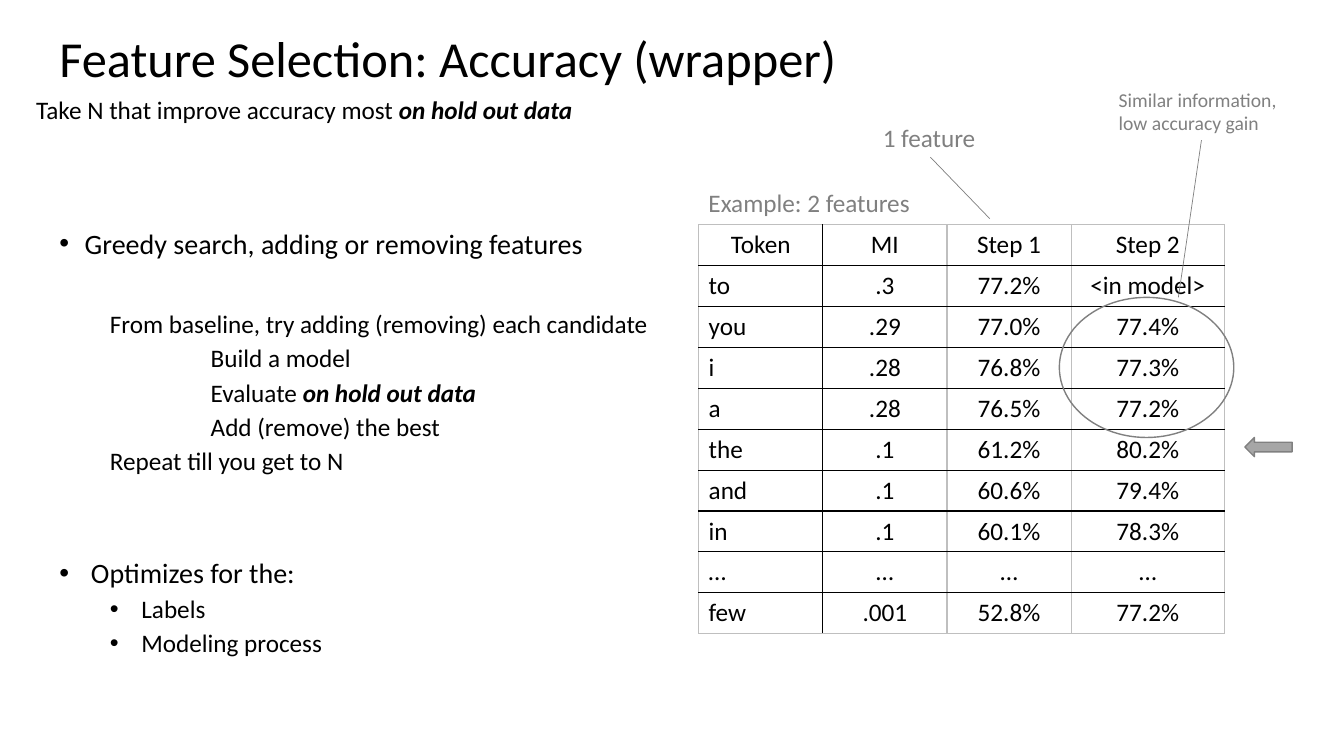
"""Build the slide on accuracy-based (wrapper) feature selection."""
from lxml.etree import SubElement
from pptx import Presentation
from pptx.dml.color import RGBColor
from pptx.enum.shapes import MSO_CONNECTOR, MSO_SHAPE
from pptx.enum.text import MSO_ANCHOR, MSO_AUTO_SIZE, PP_ALIGN
from pptx.oxml.ns import qn
from pptx.util import Pt

FONT = "Calibri"
BLACK, GREY, ARROW_FILL, TABLE_EDGE = "000000", "808080", "A6A6A6", "BFBFBF"
TITLE = "Feature Selection: Accuracy (wrapper)"
HOLD_OUT = ("on hold out data", True)

# Body lines: runs, size, level, left margin, first-line indent, space before
BODY = [
    ([("Greedy search, adding or removing features", False)], 20, 0, 18, -18, 10),
    ([("From baseline, try adding (removing) each candidate", False)], 18, 1, 36, 0, 37),
    ([("Build a model", False)], 18, 1, 108, 0, 5),
    ([("Evaluate ", False), HOLD_OUT], 18, 1, 108, 0, 5),
    ([("Add (remove) the best", False)], 18, 1, 108, 0, 5),
    ([("Repeat till you get to N", False)], 18, 1, 36, 0, 5),
    ([("Optimizes for the:", False)], 20, 0, 22.5, -22.5, 59.5),
    ([("Labels", False)], 18, 1, 58.5, -22.5, 5),
    ([("Modeling process", False)], 18, 1, 58.5, -22.5, 5),
]

# Text boxes: runs, left, top, width, height, size, colour, wrap
LABELS = [
    ([("Take N that improve accuracy most ", False), HOLD_OUT],
     18.7, 64.1, 480, 29, 18, BLACK, True),
    ([("1 feature", False)], 623.5, 83.5, 81.4, 29, 18, GREY, False),
    ([("Similar information, low accuracy gain", False)],
     792, 59, 132.5, 41, 14, GREY, True),
    ([("Example: 2 features", False)], 499, 130.3, 160, 29, 18, GREY, False),
]

TOKEN_COLUMNS = [
    ["Token", "to", "you", "i", "a", "the", "and", "in", "…", "few"],
    ["MI", ".3", ".29", ".28", ".28", ".1", ".1", ".1", "…", ".001"],
]
STEP_1 = ["Step 1", "77.2%", "77.0%", "76.8%", "76.5%",
          "61.2%", "60.6%", "60.1%", "…", "52.8%"]
STEP_2 = ["Step 2", "<in model>", "77.4%", "77.3%", "77.2%",
          "80.2%", "79.4%", "78.3%", "…", "77.2%"]
TABLES = [(TOKEN_COLUMNS, 88.7), ([STEP_1], 88.7), ([STEP_2], 109.5)]
TABLE_LEFT, TABLE_TOP, ROW_HEIGHT = 499, 160.6, 29.2

CALLOUTS = [(707, 156.2, 664.6, 112.3), (841.7, 212.4, 858.2, 100.1)]
ELLIPSE = (756.7, 212.4, 124.6, 100.1)
ARROW = (889.2, 312.5, 33.8, 13.7)


def rgb(value):
    return RGBColor.from_string(value)


def add_runs(para, runs, size, color=BLACK):
    for text, emphasis in runs:
        span = para.add_run()
        span.text = text
        span.font.name = FONT
        span.font.size = Pt(size)
        span.font.bold = span.font.italic = emphasis
        span.font.color.rgb = rgb(color)


def place(shape, left, top, width, height):
    shape.left, shape.top = Pt(left), Pt(top)
    shape.width, shape.height = Pt(width), Pt(height)


def add_title(slide):
    title = slide.shapes.title
    place(title, 35.3, 15.8, 570.2, 56.2)
    frame = title.text_frame
    frame.auto_size = MSO_AUTO_SIZE.NONE
    frame.vertical_anchor = MSO_ANCHOR.MIDDLE
    para = frame.paragraphs[0]
    para.alignment = PP_ALIGN.LEFT
    para.line_spacing = 0.9
    add_runs(para, [(TITLE, False)], 36)


def add_body(slide):
    body = slide.placeholders[1]
    place(body, 35.3, 160.6, 436.3, 315.4)
    frame = body.text_frame
    frame.auto_size = MSO_AUTO_SIZE.NONE
    for index, (runs, size, level, margin, indent, before) in enumerate(BODY):
        para = frame.add_paragraph() if index else frame.paragraphs[0]
        para.level = level
        para.line_spacing = 0.9
        para.space_before = Pt(before)
        properties = para._p.get_or_add_pPr()
        properties.set("marL", str(Pt(margin)))
        properties.set("indent", str(Pt(indent)))
        if indent:
            SubElement(properties, qn("a:buFont"), typeface="Arial")
            SubElement(properties, qn("a:buChar"), char="•")
        else:
            SubElement(properties, qn("a:buNone"))
        add_runs(para, runs, size)


def set_borders(cell, edges):
    properties = cell._tc.get_or_add_tcPr()
    for index, (tag, outer) in enumerate(edges):
        border = SubElement(properties, qn(f"a:{tag}"), w=str(Pt(1)))
        fill = SubElement(border, qn("a:solidFill"))
        SubElement(fill, qn("a:srgbClr"), val=TABLE_EDGE if outer else BLACK)
        properties.insert(index, border)


def add_table(slide, columns, left, width):
    count = len(columns[0])
    frame = slide.shapes.add_table(
        count, len(columns), Pt(left), Pt(TABLE_TOP),
        Pt(width * len(columns)), Pt(ROW_HEIGHT * count))
    table = frame.table
    table.first_row = table.horz_banding = False
    for row in table.rows:
        row.height = Pt(ROW_HEIGHT)
    for x, values in enumerate(columns):
        table.columns[x].width = Pt(width)
        for y, value in enumerate(values):
            cell = table.cell(y, x)
            cell.fill.background()
            cell.vertical_anchor = MSO_ANCHOR.TOP if y else MSO_ANCHOR.MIDDLE
            para = cell.text_frame.paragraphs[0]
            is_token = columns is TOKEN_COLUMNS and x == 0 and y > 0
            para.alignment = PP_ALIGN.LEFT if is_token else PP_ALIGN.CENTER
            add_runs(para, [(value, False)], 18)
            set_borders(cell, [("lnL", x == 0), ("lnR", x == len(columns) - 1),
                               ("lnT", y == 0), ("lnB", y == count - 1)])


def add_label(slide, runs, left, top, width, height, size, color, wrap):
    box = slide.shapes.add_textbox(Pt(left), Pt(top), Pt(width), Pt(height))
    box.text_frame.word_wrap = wrap
    add_runs(box.text_frame.paragraphs[0], runs, size, color)


def add_callout(slide, *ends):
    line = slide.shapes.add_connector(MSO_CONNECTOR.STRAIGHT, *map(Pt, ends))
    line.line.color.rgb = rgb(GREY)
    line.line.width = Pt(0.5)
    SubElement(line._element.spPr, qn("a:effectLst"))


def add_marker(slide, kind, area, fill=None):
    marker = slide.shapes.add_shape(kind, *map(Pt, area))
    marker.shadow.inherit = False
    marker.line.color.rgb = rgb(GREY)
    marker.line.width = Pt(1)
    if fill:
        marker.fill.solid()
        marker.fill.fore_color.rgb = rgb(fill)
    else:
        marker.fill.background()


def main():
    deck = Presentation()
    deck.slide_width, deck.slide_height = Pt(960), Pt(540)
    page = deck.slides.add_slide(deck.slide_layouts[1])
    add_title(page)
    add_body(page)
    left = TABLE_LEFT
    for columns, width in TABLES:
        add_table(page, columns, left, width)
        left += width * len(columns)
    for label in LABELS:
        add_label(page, *label)
    for ends in CALLOUTS:
        add_callout(page, *ends)
    add_marker(page, MSO_SHAPE.OVAL, ELLIPSE)
    add_marker(page, MSO_SHAPE.LEFT_ARROW, ARROW, ARROW_FILL)
    deck.save("out.pptx")


if __name__ == "__main__":
    main()
